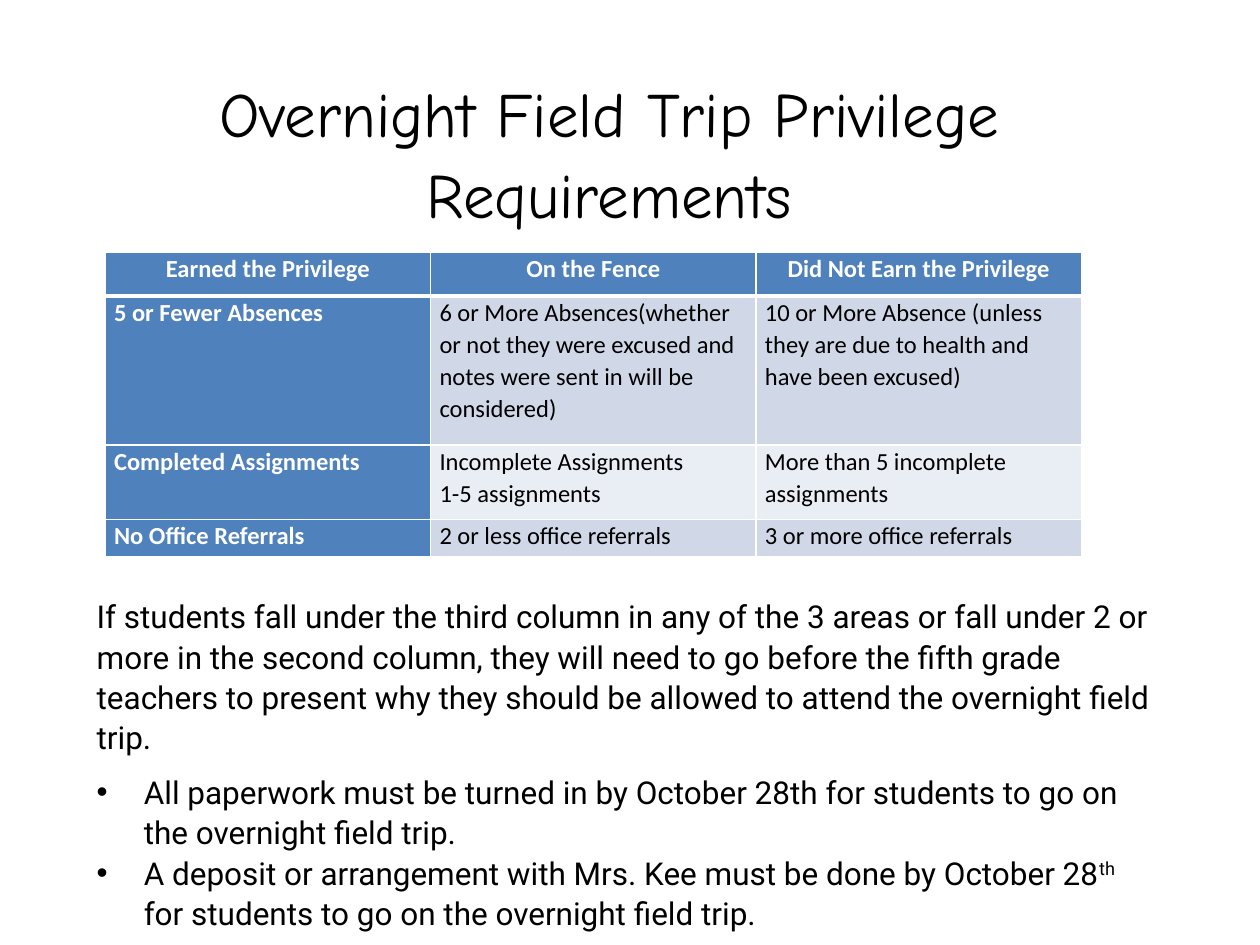
"""Build the slide on overnight field trip privilege requirements."""
from lxml import etree
from pptx import Presentation, util as u
from pptx.dml.color import RGBColor
from pptx.enum import text
from pptx.oxml.ns import qn

BLACK, WHITE, BLUE = "000000", "FFFFFF", "4F81BD"
BANDS = ["D0D8E8", "E9EDF4"]
TITLE = "Overnight Field Trip Privilege Requirements"
ROWS = [
    ["Earned the Privilege", "On the Fence", "Did Not Earn the Privilege"],
    ["5 or Fewer Absences",
     "6 or More Absences(whether or not they were excused and notes were sent in will be considered)",
     "10 or More Absence (unless they are due to health and have been excused)"],
    ["Completed Assignments", "Incomplete Assignments\n1-5 assignments",
     "More than 5 incomplete assignments"],
    ["No Office Referrals", "2 or less office referrals", "3 or more office referrals"],
]
ROW_HEIGHTS = [0.89, 3, 1.5, 0.76]
COLUMN_WIDTH = 6.56
NOTES = [
    {"runs": ["If students fall under the third column in any of the 3 areas or fall under 2 or more "
              "in the second column, they will need to go before the fifth grade teachers to present "
              "why they should be allowed to attend the overnight field trip."],
     "after": 8, "bullet": False},
    {"runs": ["All paperwork must be turned in by October 28th for students to go on the overnight "
              "field trip."],
     "after": 0, "bullet": True},
    {"runs": ["A deposit or arrangement with Mrs. Kee must be done by October 28", "th",
              " for students to go on the overnight field trip."],
     "after": 8, "bullet": True},
]


def color(value):
    return RGBColor.from_string(value)


def style(paragraph, font, size, ink=BLACK, bold=False, after=0, align=text.PP_ALIGN.LEFT):
    paragraph.alignment = align
    paragraph.line_spacing = 1.07
    paragraph.space_before = u.Pt(0)
    paragraph.space_after = u.Pt(after)
    paragraph.font.name = font
    paragraph.font.size = u.Pt(size)
    paragraph.font.bold = bold
    paragraph.font.color.rgb = color(ink)


def add_bullet(paragraph):
    properties = paragraph._p.get_or_add_pPr()
    indent = u.Cm(0.95)
    properties.set("marL", str(indent))
    properties.set("indent", str(-indent))
    etree.SubElement(properties, qn("a:buFont")).set("typeface", "Arial")
    etree.SubElement(properties, qn("a:buChar")).set("char", "•")


def add_border(cell, side, points):
    line = etree.SubElement(cell._tc.get_or_add_tcPr(), qn(f"a:ln{side}"), w=str(u.Pt(points)))
    fill = etree.SubElement(line, qn("a:solidFill"))
    etree.SubElement(fill, qn("a:srgbClr"), val=WHITE)


def add_text_frame(slide, left, top, width, height):
    frame = slide.shapes.add_textbox(u.Cm(left), u.Cm(top), u.Cm(width), u.Cm(height)).text_frame
    frame.word_wrap = True
    return frame


def add_title(slide):
    paragraph = add_text_frame(slide, 3.18, 1.27, 18.2, 3.5).paragraphs[0]
    paragraph.text = TITLE
    style(paragraph, "Comic Neue", 36, after=8, align=text.PP_ALIGN.CENTER)


def fill_cell(cell, content, row, column):
    heading = row == 0 or column == 0
    cell.margin_left = cell.margin_right = u.Cm(0.18)
    cell.margin_top = cell.margin_bottom = 0
    thickness = {"L": 1, "R": 1, "T": 3 if row == 1 else 1, "B": 3 if row == 0 else 1}
    for side, points in thickness.items():
        add_border(cell, side, points)
    cell.fill.solid()
    cell.fill.fore_color.rgb = color(BLUE if heading else BANDS[(row - 1) % 2])
    cell.text = content
    align = text.PP_ALIGN.CENTER if row == 0 else text.PP_ALIGN.LEFT
    for paragraph in cell.text_frame.paragraphs:
        style(paragraph, "Calibri", 14, WHITE if heading else BLACK, heading, align=align)


def add_requirements(slide):
    columns = len(ROWS[0])
    table = slide.shapes.add_table(
        len(ROWS), columns, u.Cm(2.12), u.Cm(5.08),
        u.Cm(COLUMN_WIDTH * columns), u.Cm(sum(ROW_HEIGHTS))).table
    for column in table.columns:
        column.width = u.Cm(COLUMN_WIDTH)
    for row, (contents, height) in enumerate(zip(ROWS, ROW_HEIGHTS)):
        table.rows[row].height = u.Cm(height)
        for column, content in enumerate(contents):
            fill_cell(table.cell(row, column), content, row, column)


def add_notes(slide):
    frame = add_text_frame(slide, 1.7, 11.86, 21.8, 6.3)
    for index, note in enumerate(NOTES):
        paragraph = frame.add_paragraph() if index else frame.paragraphs[0]
        style(paragraph, "Roboto", 18, after=note["after"])
        if note["bullet"]:
            properties = paragraph._p.get_or_add_pPr()
            defaults = properties.find(qn("a:defRPr"))
            add_bullet(paragraph)
            properties.append(defaults)
        for content in note["runs"]:
            run = paragraph.add_run()
            run.text = content
            if content == "th":
                run._r.get_or_add_rPr().set("baseline", "30000")


def main():
    presentation = Presentation()
    presentation.slide_width, presentation.slide_height = u.Cm(25.4), u.Cm(19.05)
    slide = presentation.slides.add_slide(presentation.slide_layouts[6])
    add_title(slide)
    add_requirements(slide)
    add_notes(slide)
    presentation.save("out.pptx")


if __name__ == "__main__":
    main()
